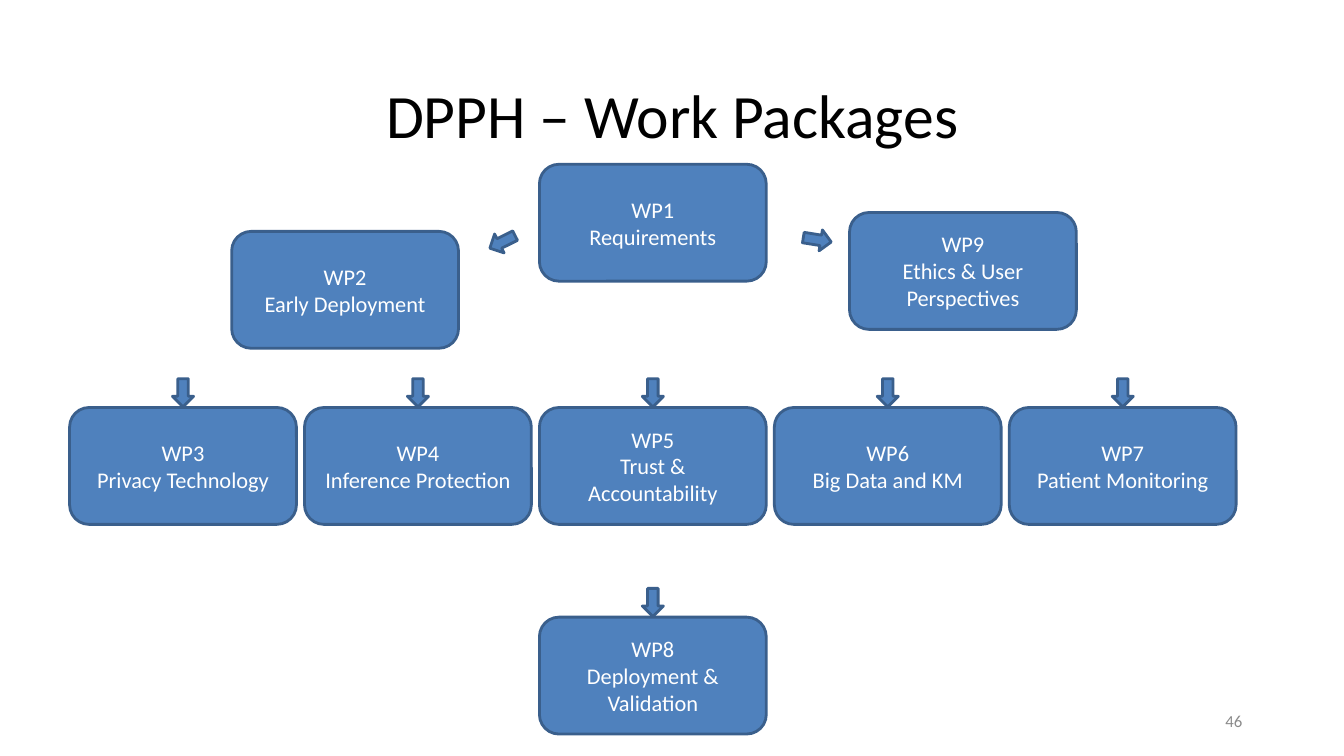
from dataclasses import dataclass

from pptx import Presentation
from pptx import util as u
from pptx.dml.color import RGBColor
from pptx.enum import shapes, text

BLUE = RGBColor(0x4F, 0x81, 0xBD)
EDGE = RGBColor(0x3A, 0x5F, 0x8C)
WHITE = RGBColor(0xFF, 0xFF, 0xFF)
BLACK = RGBColor(0, 0, 0)
GREY = RGBColor(0x8B, 0x8B, 0x8B)

LEFT, TOP = 0.69, 1.63
COL, ROW = 2.33, 2.08
WIDE, HIGH = 2.25, 1.16
LONG, THICK = 0.28, 0.21
MAIN, LAST = 1.16, 2.16
LIFT = 0.07


@dataclass
class Card:
    code: str
    label: str
    col: float
    row: float


@dataclass
class Arrow:
    col: float
    row: float
    turn: float = 90


CARDS = [
    Card("WP9", "Ethics & User Perspectives", 3.32, 0.23),
    Card("WP8", "Deployment & Validation", 2, LAST),
    Card("WP7", "Patient Monitoring", 4, MAIN),
    Card("WP6", "Big Data and KM", 3, MAIN),
    Card("WP5", "Trust & Accountability", 2, MAIN),
    Card("WP4", "Inference Protection", 1, MAIN),
    Card("WP3", "Privacy Technology", 0, MAIN),
    Card("WP2", "Early Deployment", 0.69, 0.32),
    Card("WP1", "Requirements", 2, 0),
]
ARROWS = [
    Arrow(1.36, 0.37, 153.5),
    Arrow(2.7, 0.36, 9.1),
    *[Arrow(col, MAIN - LIFT) for col in range(5)],
    Arrow(2, LAST - LIFT),
]


def write(shape, words: str, size: float, color: RGBColor,
          align=text.PP_ALIGN.CENTER) -> None:
    frame = shape.text_frame
    frame.word_wrap = True
    frame.auto_size = text.MSO_AUTO_SIZE.NONE
    frame.vertical_anchor = text.MSO_ANCHOR.MIDDLE
    frame.text = words
    for para in frame.paragraphs:
        para.alignment = align
        para.font.name = "Calibri"
        para.font.size = u.Pt(size)
        para.font.color.rgb = color


def place(shape, left: float, top: float, wide: float, high: float) -> None:
    shape.left, shape.top = u.Inches(left), u.Inches(top)
    shape.width, shape.height = u.Inches(wide), u.Inches(high)


def block(slide, kind, left: float, top: float, wide: float, high: float):
    shape = slide.shapes.add_shape(kind, *map(u.Inches, (left, top, wide, high)))
    shape.shadow.inherit = False
    shape.fill.solid()
    shape.fill.fore_color.rgb = BLUE
    shape.line.color.rgb = EDGE
    shape.line.width = u.Pt(2)
    return shape


def draw_card(slide, card: Card) -> None:
    shape = block(slide, shapes.MSO_SHAPE.ROUNDED_RECTANGLE,
                  LEFT + card.col * COL, TOP + card.row * ROW, WIDE, HIGH)
    write(shape, f"{card.code}\n{card.label}", size=16, color=WHITE)


def draw_arrow(slide, arrow: Arrow) -> None:
    shape = block(slide, shapes.MSO_SHAPE.RIGHT_ARROW,
                  LEFT + arrow.col * COL + (WIDE - LONG) / 2,
                  TOP + arrow.row * ROW - THICK / 2, LONG, THICK)
    shape.rotation = arrow.turn


def main() -> None:
    deck = Presentation()
    deck.slide_width, deck.slide_height = u.Inches(13.33), u.Inches(7.5)
    slide = deck.slides.add_slide(deck.slide_layouts[5])
    title = slide.shapes.title
    place(title, 0.92, 0.4, 11.5, 1.45)
    write(title, "DPPH – Work Packages", size=44, color=BLACK)
    page = slide.shapes.add_textbox(0, 0, 0, 0)
    place(page, 9.42, 6.95, 3, 0.4)
    write(page, "46", size=12, color=GREY, align=text.PP_ALIGN.RIGHT)
    for card in CARDS:
        draw_card(slide, card)
    for arrow in ARROWS:
        draw_arrow(slide, arrow)
    deck.save("out.pptx")


if __name__ == "__main__":
    main()
